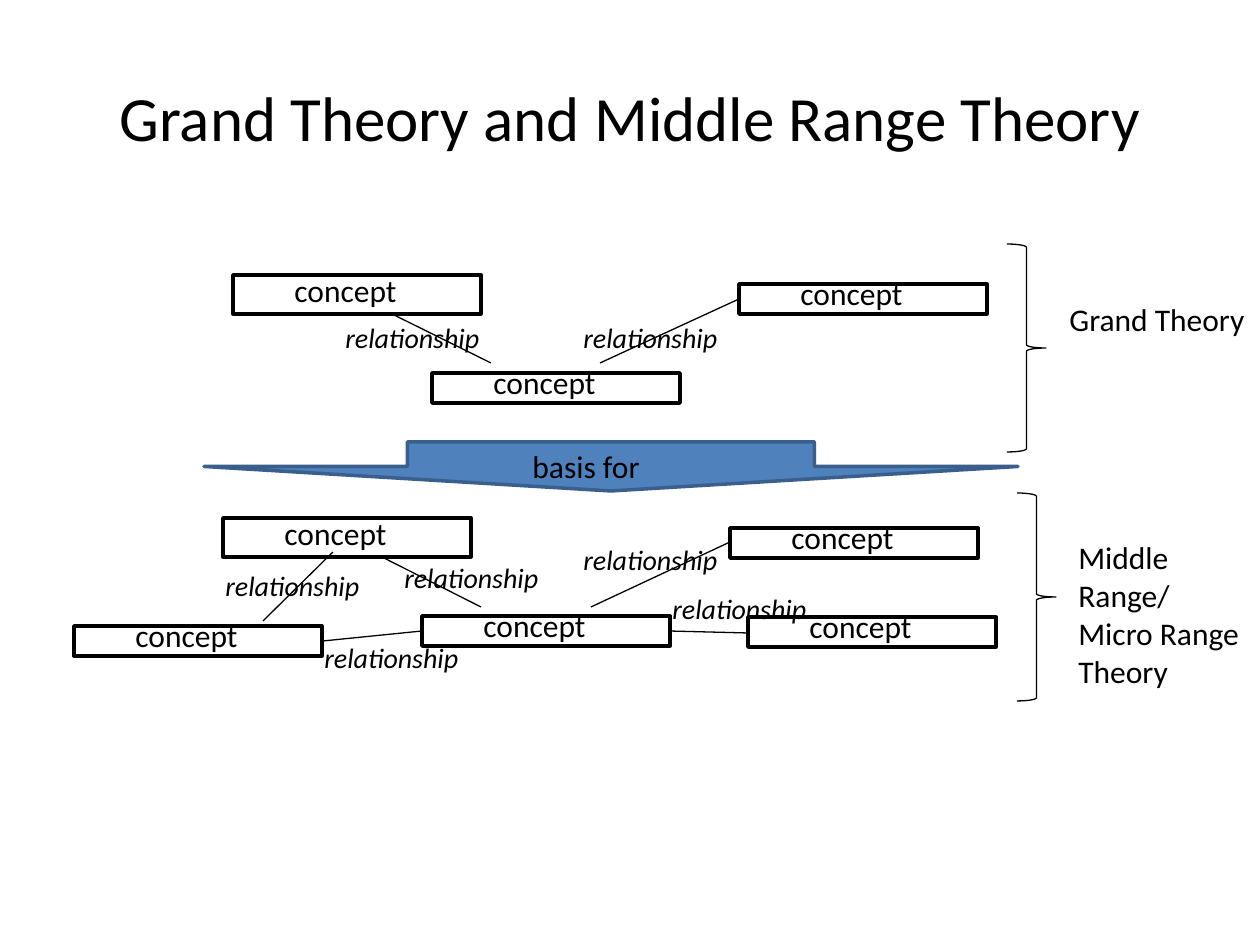
from pptx import Presentation
from pptx.dml.color import RGBColor
from pptx.enum.shapes import MSO_CONNECTOR, MSO_SHAPE
from pptx.enum.text import MSO_ANCHOR, PP_ALIGN
from pptx.oxml.ns import qn
from pptx.util import Emu, Pt
from lxml.etree import SubElement

PX = 914400 / 126
COLORS = {"ink": "000000", "paper": "FFFFFF", "arrow": "4F81BD", "edge": "3A5F8C"}

# Concept boxes: left, top, height
CONCEPTS = [
    (233, 275, 39), (432, 373, 30), (739, 284, 30),
    (223, 518, 39), (422, 616, 30), (730, 528, 30),
    (748, 617, 30), (74, 626, 30),
]
# Links between concepts: x1, y1, x2, y2
LINKS = [
    (392, 314, 491, 363), (600, 363, 739, 299),
    (382, 557, 481, 607), (591, 607, 730, 542),
    (323, 641, 422, 631), (669, 631, 748, 633), (263, 621, 333, 552),
]
# Relationship labels: left, top
LABELS = [
    (333, 314), (571, 314), (571, 536), (660, 585),
    (392, 554), (213, 562), (312, 634),
]


def px(*nums):
    return [Emu(round(n * PX)) for n in nums]


def color(name):
    return RGBColor.from_string(COLORS[name])


def style(par, size, italic=None):
    font = par.font
    font.name, font.size, font.italic = "Calibri", Pt(size), italic
    font.color.rgb = color("ink")


def add_text(slide, box, text, size=18, italic=None):
    frame = slide.shapes.add_textbox(*px(*box)).text_frame
    frame.word_wrap = True
    frame.text = text
    for par in frame.paragraphs:
        style(par, size, italic)


def add_shape(slide, kind, box, fill=None, line="ink", width=2):
    shape = slide.shapes.add_shape(kind, *px(*box))
    shape.shadow.inherit = False
    if fill:
        shape.fill.solid()
        shape.fill.fore_color.rgb = color(fill)
    else:
        shape.fill.background()
    shape.line.color.rgb = color(line)
    shape.line.width = Pt(width)


def add_concept(slide, left, top, high):
    add_shape(slide, MSO_SHAPE.RECTANGLE, (left, top, 248, high), "paper")
    rise = 10 if high > 30 else 16
    add_text(slide, (left + 49, top - rise, 218, 50), "concept")


def add_link(slide, ends):
    link = slide.shapes.add_connector(MSO_CONNECTOR.STRAIGHT, *px(*ends))
    link.line.color.rgb = color("ink")
    link.line.width = Pt(0.75)
    SubElement(link._element.spPr, qn("a:effectLst"))


def add_title(slide, text):
    title = slide.shapes.title
    title.left, title.top, title.width, title.height = px(63, 38, 1134, 157)
    frame = title.text_frame
    frame.text = text
    frame.vertical_anchor = MSO_ANCHOR.MIDDLE
    par = frame.paragraphs[0]
    par.alignment = PP_ALIGN.CENTER
    style(par, 36)


def main():
    deck = Presentation()
    deck.slide_width, deck.slide_height = px(1260, 945)
    slide = deck.slides.add_slide(deck.slide_layouts[5])
    add_title(slide, "Grand Theory and Middle Range Theory")

    # Concept networks of both theories
    for spot in CONCEPTS:
        add_concept(slide, *spot)
    for ends in LINKS:
        add_link(slide, ends)
    for left, top in LABELS:
        add_text(slide, (left, top, 218, 47), "relationship", 16, True)

    # Braces with theory names
    for left, top in [(1007, 244), (1017, 493)]:
        add_shape(slide, MSO_SHAPE.RIGHT_BRACE, (left, top, 39, 208), width=0.75)
    add_text(slide, (1057, 294, 208, 50), "Grand Theory")
    add_text(slide, (1066, 532, 189, 165), "Middle Range/\nMicro Range Theory")

    # Arrow from grand to middle range
    add_shape(slide, MSO_SHAPE.DOWN_ARROW, (204, 442, 814, 49), "arrow", "edge")
    add_text(slide, (520, 441, 218, 50), "basis for")
    deck.save("out.pptx")


if __name__ == "__main__":
    main()
